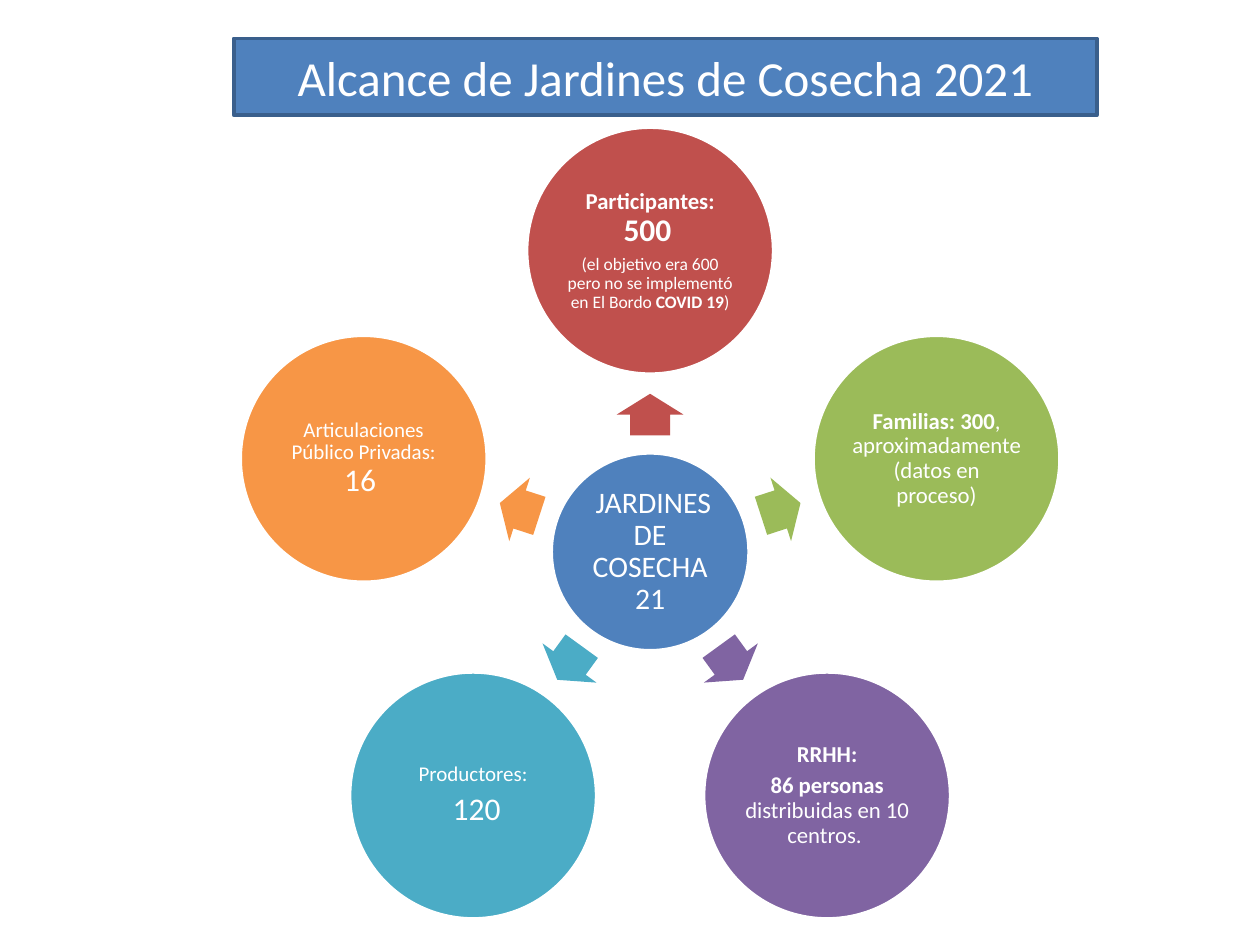
"""Builds a radial diagram slide with a title bar, a hub and five satellites."""
from math import cos, radians, sin

from pptx import Presentation
from pptx.dml.color import RGBColor
from pptx.enum.shapes import MSO_SHAPE as SHAPE
from pptx.enum.text import MSO_ANCHOR as ANCHOR, PP_ALIGN as ALIGN
from pptx.util import Inches, Pt

WHITE = RGBColor(0xFF, 0xFF, 0xFF)
BLUE = RGBColor(0x4F, 0x81, 0xBD)
NAVY = RGBColor(0x3A, 0x5F, 0x8C)
RED = RGBColor(0xC0, 0x50, 0x4D)
GREEN = RGBColor(0x9B, 0xBB, 0x59)
PURPLE = RGBColor(0x80, 0x64, 0xA2)
TEAL = RGBColor(0x4B, 0xAC, 0xC6)
ORANGE = RGBColor(0xF7, 0x96, 0x46)

TITLE = [[("Alcance de Jardines de Cosecha 2021", 28, False)]]
HUB = [[(" JARDINES DE COSECHA 21", 17, False)]]
SATELLITES = [
    (RED, [[("Participantes: ", 13, True), ("500", 18, True), (" ", 13, True)],
           [("(el objetivo era 600 pero no se implementó en El Bordo ", 10, False),
            ("COVID 19", 10, True), (")", 10, False)]]),
    (GREEN, [[("Familias: 300", 13, True),
              (", aproximadamente (datos en proceso)", 13, False)]]),
    (PURPLE, [[("RRHH:", 13, True)],
              [("86 personas ", 13, True),
               ("distribuidas en 10 centros. ", 13, False)]]),
    (TEAL, [[("Productores:", 12, False)], [(" 120", 18, False)]]),
    (ORANGE, [[("Articulaciones Público Privadas: ", 12, False),
               ("16 ", 18, False)]]),
]

W, H = 10, 7.5
CX, CY = 5.16, 4.38
HUB_SIZE, SATELLITE_SIZE = 1.57, 1.96
ORBIT, ARROW_ORBIT = 2.39, 1.09
ARROW_W, ARROW_H = 0.33, 0.53


def add_shape(s, kind, cx, cy, w, h, fill, line=None):
    sp = s.shapes.add_shape(kind, Inches(cx - w / 2), Inches(cy - h / 2),
                            Inches(w), Inches(h))
    sp.shadow.inherit = False
    sp.fill.solid()
    sp.fill.fore_color.rgb = fill
    if line is None:
        sp.line.fill.background()
    else:
        sp.line.color.rgb = line
        sp.line.width = Pt(2)
    return sp


def write(sp, paragraphs):
    tf = sp.text_frame
    tf.word_wrap = True
    tf.vertical_anchor = ANCHOR.MIDDLE
    for i, runs in enumerate(paragraphs):
        p = tf.add_paragraph() if i else tf.paragraphs[0]
        p.alignment = ALIGN.CENTER
        for text, size, bold in runs:
            r = p.add_run()
            r.text = text
            r.font.name = "Calibri"
            r.font.size = Pt(size)
            r.font.bold = bold
            r.font.color.rgb = WHITE


def add_circle(s, cx, cy, size, fill, paragraphs):
    sp = add_shape(s, SHAPE.OVAL, cx, cy, size, size, fill, WHITE)
    write(sp, paragraphs)
    tf = sp.text_frame
    tf.margin_left = tf.margin_right = Inches(0.02)
    tf.margin_top = tf.margin_bottom = Inches(0.02)
    for p in tf.paragraphs:
        p.line_spacing = 0.9
        p.space_after = Pt(4)


def add_arrow(s, cx, cy, angle, fill):
    sp = add_shape(s, SHAPE.RIGHT_ARROW, cx, cy, ARROW_W, ARROW_H, fill)
    sp.adjustments[0], sp.adjustments[1] = 0.6, 0.5
    sp.rotation = angle


def main():
    prs = Presentation()
    prs.slide_width, prs.slide_height = Inches(W), Inches(H)
    s = prs.slides.add_slide(prs.slide_layouts[6])
    write(add_shape(s, SHAPE.RECTANGLE, 5.28, 0.61, 6.85, 0.61, BLUE, NAVY), TITLE)
    add_circle(s, CX, CY, HUB_SIZE, BLUE, HUB)
    for i, (color, paragraphs) in enumerate(SATELLITES):
        angle = (270 + i * 360 / len(SATELLITES)) % 360
        dx, dy = cos(radians(angle)), sin(radians(angle))
        add_arrow(s, CX + ARROW_ORBIT * dx, CY + ARROW_ORBIT * dy, angle, color)
        add_circle(s, CX + ORBIT * dx, CY + ORBIT * dy, SATELLITE_SIZE,
                   color, paragraphs)
    prs.save("out.pptx")


if __name__ == "__main__":
    main()
